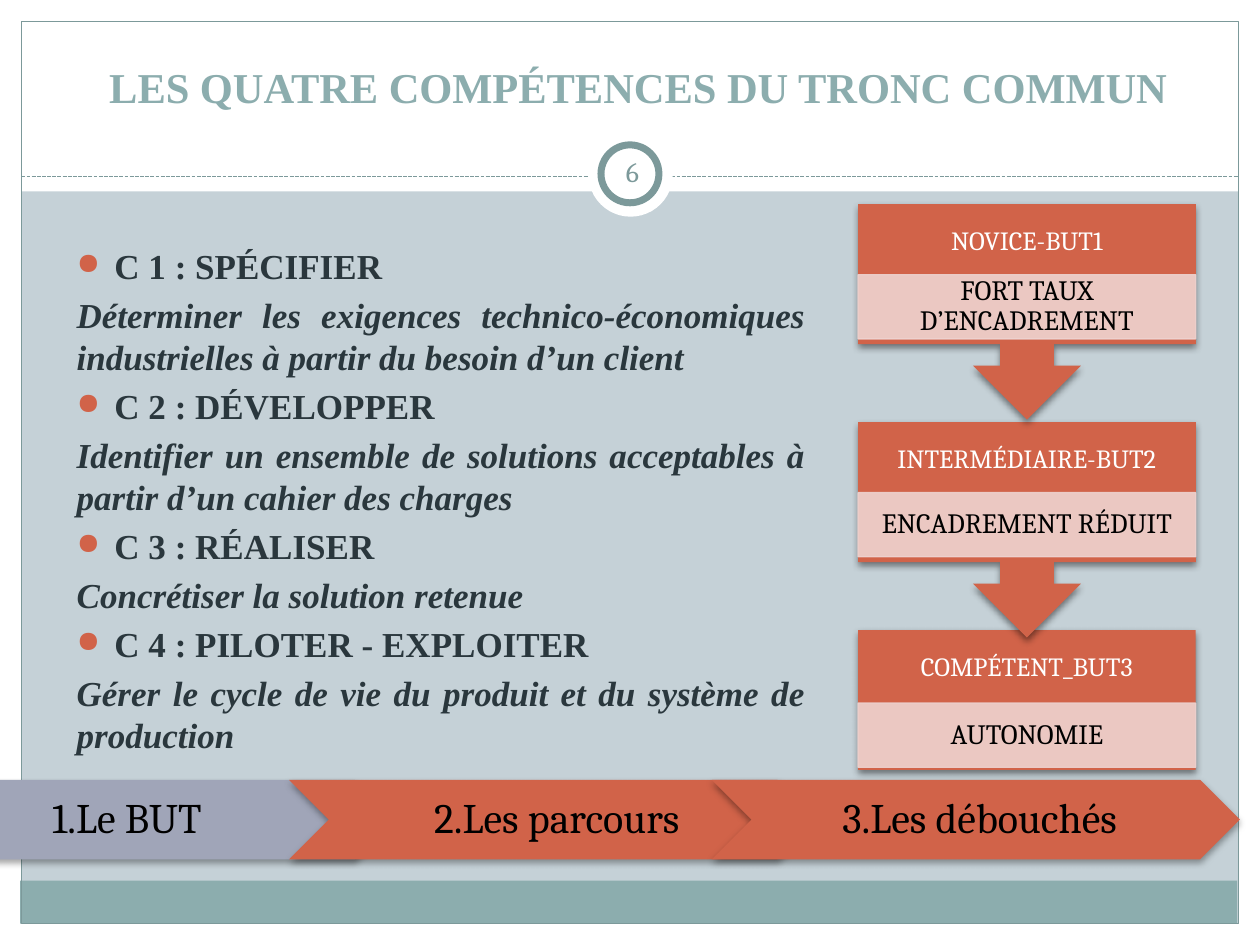
"""Builds the slide on the four core skills, with its level ladder and chapter ribbon."""
from dataclasses import dataclass

from lxml import etree
from pptx import Presentation
from pptx import util as u
from pptx.dml.color import RGBColor
from pptx.enum import dml, shapes, text
from pptx.oxml.ns import qn

KINDS = shapes.MSO_SHAPE
ALIGN = text.PP_ALIGN
ANCHOR = text.MSO_ANCHOR


@dataclass(frozen=True)
class Theme:
    """Colours, fonts and type sizes of the slide."""
    paper: str = "C5D1D7"
    white: str = "FFFFFF"
    black: str = "000000"
    ink: str = "2A373D"
    teal: str = "8CADAE"
    edge: str = "7C999A"
    accent: str = "D16349"
    pale: str = "EED3D0"
    muted: str = "A0A5B8"
    serif: str = "Times New Roman"
    label: str = "Cambria"
    title: float = 24.3
    ribbon: float = 24
    body: float = 20
    panel: float = 16
    level: float = 15


class Sketch:
    """Draws elements on a slide measured as 100 columns by 75 rows."""

    def __init__(self, deck, theme):
        self.theme = theme
        self.column = deck.slide_width / 100
        self.row = deck.slide_height / 75
        self.slide = deck.slides.add_slide(deck.slide_layouts[6])
        self.slide.background.fill.solid()
        self.slide.background.fill.fore_color.rgb = RGBColor.from_string(theme.paper)

    def place(self, left, top, width, height):
        """Turns columns and rows into slide lengths."""
        return (round(left * self.column), round(top * self.row),
                round(width * self.column), round(height * self.row))

    def shape(self, kind, area, fill=None, line=None, weight=0.75, shadow=0, alpha=0):
        """Adds a preset shape with optional fill, outline, shadow and opacity."""
        box = self.slide.shapes.add_shape(kind, *self.place(*area))
        box.shadow.inherit = False
        if fill:
            box.fill.solid()
            box.fill.fore_color.rgb = RGBColor.from_string(fill)
        else:
            box.fill.background()
        if line:
            box.line.color.rgb = RGBColor.from_string(line)
            box.line.width = u.Pt(weight)
        else:
            box.line.fill.background()
        properties = box._element.spPr
        if alpha:
            for color in properties.iter(qn("a:srgbClr")):
                etree.SubElement(color, qn("a:alpha"), val=str(alpha * 1000))
        if shadow:
            outer = etree.SubElement(
                properties.find(qn("a:effectLst")), qn("a:outerShdw"),
                blurRad=str(u.Pt(4)), dist=str(u.Pt(2)), dir="5400000", rotWithShape="0")
            color = etree.SubElement(outer, qn("a:srgbClr"), val=self.theme.black)
            etree.SubElement(color, qn("a:alpha"), val=str(shadow * 1000))
        return box

    def rule(self, left, right, row):
        """Adds a dashed horizontal line."""
        x, y, width, _ = self.place(left, row, right - left, 0)
        line = self.slide.shapes.add_connector(
            shapes.MSO_CONNECTOR.STRAIGHT, x, y, x + width, y)
        line.line.color.rgb = RGBColor.from_string(self.theme.edge)
        line.line.width = u.Pt(0.75)
        line.line.dash_style = dml.MSO_LINE.SQUARE_DOT
        etree.SubElement(line._element.spPr, qn("a:effectLst"))

    def style(self, para, size, color, face, bold=False, italic=False):
        """Sets the font of a paragraph."""
        para.font.size = u.Pt(size)
        para.font.color.rgb = RGBColor.from_string(color)
        para.font.name = face
        para.font.bold = bold
        para.font.italic = italic

    def caption(self, box, words, size, color, face, insets=(0, 0, 0, 0), spacing=0.9, bold=False):
        """Puts one centred paragraph in a shape, with insets in columns."""
        frame = box.text_frame
        frame.word_wrap = True
        frame.vertical_anchor = ANCHOR.MIDDLE
        (frame.margin_left, frame.margin_top,
         frame.margin_right, frame.margin_bottom) = self.place(*insets)
        para = frame.paragraphs[0]
        para.text = words
        para.alignment = ALIGN.CENTER
        para.line_spacing = spacing
        self.style(para, size, color, face, bold)

    def label(self, area, *args, **options):
        """Adds a text box holding one centred paragraph."""
        self.caption(self.slide.shapes.add_textbox(*self.place(*area)), *args, **options)

    def bullet(self, para):
        """Gives a paragraph a hanging round bullet."""
        indent = round(3 * self.column)
        properties = para._p.get_or_add_pPr()
        properties.set("marL", str(indent))
        properties.set("indent", str(-indent))
        color = etree.SubElement(properties, qn("a:buClr"))
        etree.SubElement(color, qn("a:srgbClr"), val=self.theme.accent)
        etree.SubElement(properties, qn("a:buSzPct"), val="85000")
        etree.SubElement(properties, qn("a:buChar"), char="●")

    def skills(self, area, entries):
        """Lists each skill as a bullet followed by its description."""
        frame = self.slide.shapes.add_textbox(*self.place(*area)).text_frame
        frame.word_wrap = True
        lines = [(words, rank) for entry in entries for rank, words in enumerate(entry)]
        for index, (words, rank) in enumerate(lines):
            para = frame.add_paragraph() if index else frame.paragraphs[0]
            para.text = words
            para.alignment = ALIGN.JUSTIFY
            if index:
                para.space_before = u.Pt(4)
            if rank == 0:
                self.bullet(para)
            self.style(para, self.theme.body, self.theme.ink, self.theme.serif, True, rank == 1)

    def level(self, top, height, gap, name, support):
        """Adds one step of the ladder; a tall step ends in a down arrow."""
        left, width, theme = 68.1, 26.8, self.theme
        arrow = height > 12
        kind = KINDS.UP_ARROW_CALLOUT if arrow else KINDS.RECTANGLE
        box = self.shape(kind, (left, top, width, height), theme.accent, shadow=45)
        box.rotation = 180 if arrow else 0
        self.label((left, top, width, 6), name, theme.level, theme.white, theme.label,
                   (1.2, 1.2, 1.2, 1.2))
        panel = self.shape(KINDS.RECTANGLE, (left, top + gap, width, 5.1),
                           theme.pale, theme.pale, alpha=90)
        self.caption(panel, support, theme.panel, theme.black, theme.label, (1.2, 0.2, 1.2, 0.2))


def main():
    """Builds and saves the deck."""
    deck = Presentation()
    deck.slide_width, deck.slide_height = u.Inches(10), u.Inches(7.5)
    theme = Theme()
    sketch = Sketch(deck, theme)

    for area in ((0, 73.3, 100, 1.7), (0, 0, 100, 15.2), (0, 0, 1.7, 75), (98.3, 0, 1.7, 75)):
        sketch.shape(KINDS.RECTANGLE, area, theme.white)
    sketch.shape(KINDS.RECTANGLE, (1.6, 69.9, 96.6, 3.4), theme.teal)
    sketch.shape(KINDS.RECTANGLE, (1.7, 1.7, 96.6, 71.6), line=theme.edge)
    sketch.rule(1.7, 98.3, 14)
    sketch.shape(KINDS.OVAL, (46.7, 10.5, 6.7, 6.7), theme.white)
    sketch.shape(KINDS.OVAL, (47.7, 11.5, 4.6, 4.6), theme.white, theme.edge, 4)

    sketch.label((2, 1.3, 97.3, 11.2), "LES QUATRE COMPÉTENCES DU TRONC COMMUN",
                 theme.title, theme.teal, theme.serif, spacing=1, bold=True)
    sketch.skills((5.1, 18.9, 59.8, 43.8), (
        ("C 1 : SPÉCIFIER", "Déterminer les exigences technico-économiques "
         "industrielles à partir du besoin d’un client"),
        ("C 2 : DÉVELOPPER", "Identifier un ensemble de solutions acceptables à "
         "partir d’un cahier des charges"),
        ("C 3 : RÉALISER", "Concrétiser la solution retenue"),
        ("C 4 : PILOTER - EXPLOITER", "Gérer le cycle de vie du produit et du "
         "système de production"),
    ))

    sketch.level(50, 11.1, 5.8, "COMPÉTENT_BUT3", "AUTONOMIE")
    sketch.level(33.5, 17.1, 5.6, "INTERMÉDIAIRE-BUT2", "ENCADREMENT RÉDUIT")
    sketch.level(16.2, 17.1, 5.6, "NOVICE-BUT1", "FORT TAUX D’ENCADREMENT")

    chapters = ((KINDS.PENTAGON, theme.muted, 1.4, "1.Le BUT"),
                (KINDS.CHEVRON, theme.accent, 1, "2.Les parcours"),
                (KINDS.CHEVRON, theme.accent, 1, "3.Les débouchés"))
    for index, (kind, fill, inset, words) in enumerate(chapters):
        box = sketch.shape(kind, (-10.6 + 33.55 * index, 61.9, 41.9, 6.3), fill, shadow=35)
        sketch.caption(box, words, theme.ribbon, theme.black, theme.label, (inset, 0.7, 0.4, 0.7))

    sketch.label((47.7, 11.2, 5, 4.8), "6", theme.panel, theme.edge, theme.label,
                 (0.5, 0.5, 0.5, 0.5), spacing=1)
    deck.save("out.pptx")


if __name__ == "__main__":
    main()
